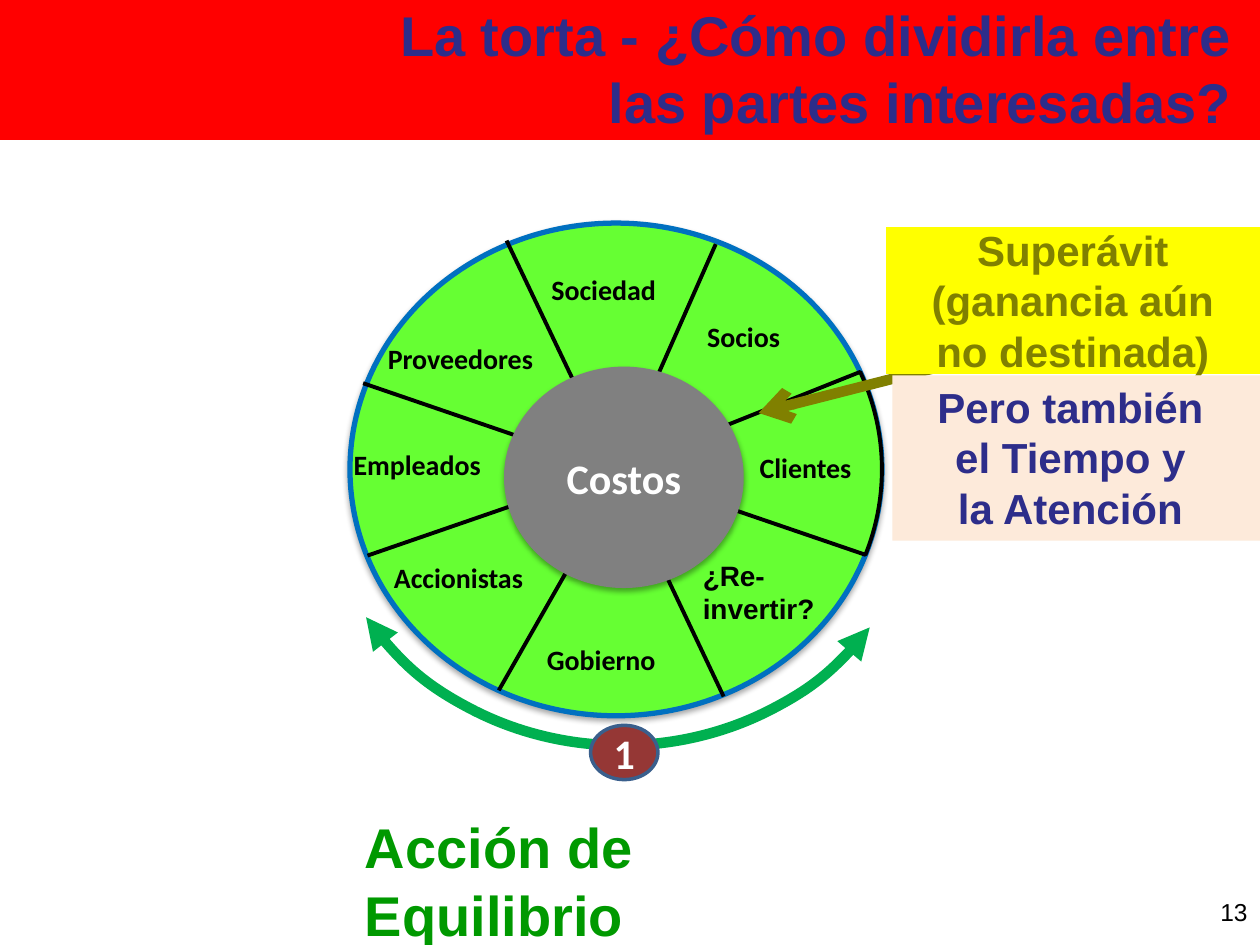
from lxml.etree import SubElement
from pptx import Presentation
from pptx.dml.color import RGBColor
from pptx.enum.shapes import MSO_CONNECTOR, MSO_SHAPE
from pptx.enum.text import MSO_ANCHOR, MSO_AUTO_SIZE, PP_ALIGN
from pptx.oxml.ns import qn
from pptx.util import Pt

BLACK, WHITE, NAVY, OLIVE = "000000", "FFFFFF", "2D2D8A", "808000"
LIME, PIE_BLUE, ARC_GREEN = "66FF33", "0070C0", "00B050"


def color(hex_text):
    return RGBColor.from_string(hex_text)


def add_ends(line_format, **ends):
    """Add arrowheads; the keywords are headEnd and tailEnd, in that order."""
    line = line_format._get_or_add_ln()
    for tag, kind in ends.items():
        SubElement(line, qn(f"a:{tag}"), type=kind)


def add_shadow(shape):
    effects = SubElement(shape._element.spPr, qn("a:effectLst"))
    shadow = SubElement(effects, qn("a:outerShdw"), blurRad=str(Pt(3.1)),
                        dist=str(Pt(1.8)), dir="5400000", rotWithShape="0")
    tint = SubElement(shadow, qn("a:srgbClr"), val=BLACK)
    SubElement(tint, qn("a:alpha"), val="35000")


class SlideBuilder:
    """Holds the text style and the slide that is being filled."""

    font = "Arial"

    def __init__(self, slide):
        self.slide = slide

    def set_text(self, box, text, size, hue, align, font=None, bold=True):
        frame = box.text_frame
        frame.text = text
        for para in frame.paragraphs:
            para.alignment = align
            para.font.name = font or self.font
            para.font.size = Pt(size)
            para.font.bold = bold
            para.font.color.rgb = color(hue)

    def shape(self, kind, place, fill=None, line=None, width=1, adjust=(), shadow=False):
        shape = self.slide.shapes.add_shape(kind, *map(Pt, place))
        for index, value in enumerate(adjust):
            shape.adjustments[index] = value
        if fill:
            shape.fill.solid()
            shape.fill.fore_color.rgb = color(fill)
        else:
            shape.fill.background()
        if line:
            shape.line.color.rgb = color(line)
            shape.line.width = Pt(width)
        else:
            shape.line.fill.background()
        if shadow:
            add_shadow(shape)
        else:
            shape.shadow.inherit = False
        return shape

    def panel(self, kind, place, fill, text, size, hue, align=PP_ALIGN.CENTER,
              anchor=MSO_ANCHOR.MIDDLE, font=None, **look):
        """Add a filled shape that carries text."""
        panel = self.shape(kind, place, fill, **look)
        panel.text_frame.word_wrap = True
        panel.text_frame.vertical_anchor = anchor
        self.set_text(panel, text, size, hue, align, font)

    def label(self, place, text, size, hue, font=None, align=PP_ALIGN.LEFT,
              wrap=False, bold=True):
        box = self.slide.shapes.add_textbox(*map(Pt, place))
        box.text_frame.word_wrap = wrap
        box.text_frame.auto_size = MSO_AUTO_SIZE.NONE if wrap else MSO_AUTO_SIZE.SHAPE_TO_FIT_TEXT
        self.set_text(box, text, size, hue, align, font, bold)
        return box

    def line(self, start, end, hue=BLACK, width=2.25):
        line = self.slide.shapes.add_connector(
            MSO_CONNECTOR.STRAIGHT, *map(Pt, (*start, *end)))
        line.line.color.rgb = color(hue)
        line.line.width = Pt(width)
        SubElement(line._element.spPr, qn("a:effectLst"))
        return line


def draw_pie(builder):
    pie = (200, 127.5, 304, 281.5)
    center = (352, 268.5)
    builder.shape(MSO_SHAPE.OVAL, pie, LIME, PIE_BLUE, 3, shadow=True)
    for rim in ((289.5, 137.5), (207.5, 219), (409, 139.5), (210, 317.5), (413.5, 398)):
        builder.line(rim, center)
    builder.line((492.5, 212.5), center, width=0.75)
    builder.shape(MSO_SHAPE.PIE, pie, LIME, BLACK, 2.25, adjust=(202.942, 11.334))
    builder.line((353.5, 274.5), (285, 394.5))
    builder.panel(MSO_SHAPE.OVAL, (288, 209.5, 137, 126.5), "808080", "Costos", 24,
                  WHITE, font="Calibri", shadow=True)

    for text, left, top, width in (
        ("Sociedad", 308, 152, 86.5),
        ("Proveedores", 214.5, 191.5, 112.5),
        ("Empleados", 195, 252, 101),
        ("Accionistas", 218, 317, 105),
        ("Clientes", 427, 254, 77),
        ("Socios", 397, 179, 67.5),
        ("Gobierno", 305.5, 363.5, 86.5),
    ):
        builder.label((left, top, width, 26.5), text, 16, BLACK, font="Calibri")
    builder.label((394.5, 315.5, 79, 46), "¿Re-\ninvertir?", 16, BLACK)


def draw_balance(builder):
    arc = builder.shape(MSO_SHAPE.ARC, (183.5, 116.5, 343.5, 309.5), line=ARC_GREEN,
                        width=6, adjust=(18.971, 90.501))
    add_ends(arc.line, headEnd="triangle", tailEnd="triangle")
    builder.panel(MSO_SHAPE.OVAL, (337.5, 414.5, 38.5, 31), "953735", "1", 24, WHITE,
                  font="Calibri", line="3A5F8C", width=2)
    builder.label((201.5, 461, 313, 45.5), "Acción de Equilibrio", 32, "009900", wrap=True)


def draw_notes(builder):
    arrow = builder.line((555, 205), (433.5, 236), OLIVE, 6)
    add_ends(arrow.line, tailEnd="arrow")
    builder.panel(MSO_SHAPE.LINE_CALLOUT_1, (506, 129.5, 214, 84), "FFFF00",
                  "Superávit (ganancia aún\nno destinada)", 24, OLIVE,
                  adjust=(0.188, -0.083, 1.232, -0.639))
    builder.panel(MSO_SHAPE.RECTANGLE, (510, 214.5, 210, 94.5), "FDEADA",
                  "Pero también \vel Tiempo y \vla Atención ", 24, NAVY,
                  anchor=MSO_ANCHOR.TOP)


def main():
    deck = Presentation()
    deck.slide_width, deck.slide_height = Pt(720), Pt(540)
    builder = SlideBuilder(deck.slides.add_slide(deck.slide_layouts[6]))
    draw_pie(builder)
    draw_balance(builder)
    builder.panel(MSO_SHAPE.RECTANGLE, (0, -3, 720, 83), "FF0000",
                  "La torta - ¿Cómo dividirla entre \vlas partes interesadas? ",
                  32, NAVY, align=PP_ALIGN.RIGHT)
    draw_notes(builder)
    number = builder.label((552, 502.5, 168, 37.5), "13", 14, BLACK,
                           align=PP_ALIGN.RIGHT, wrap=True, bold=False)
    number.text_frame.vertical_anchor = MSO_ANCHOR.MIDDLE
    deck.save("out.pptx")


if __name__ == "__main__":
    main()
